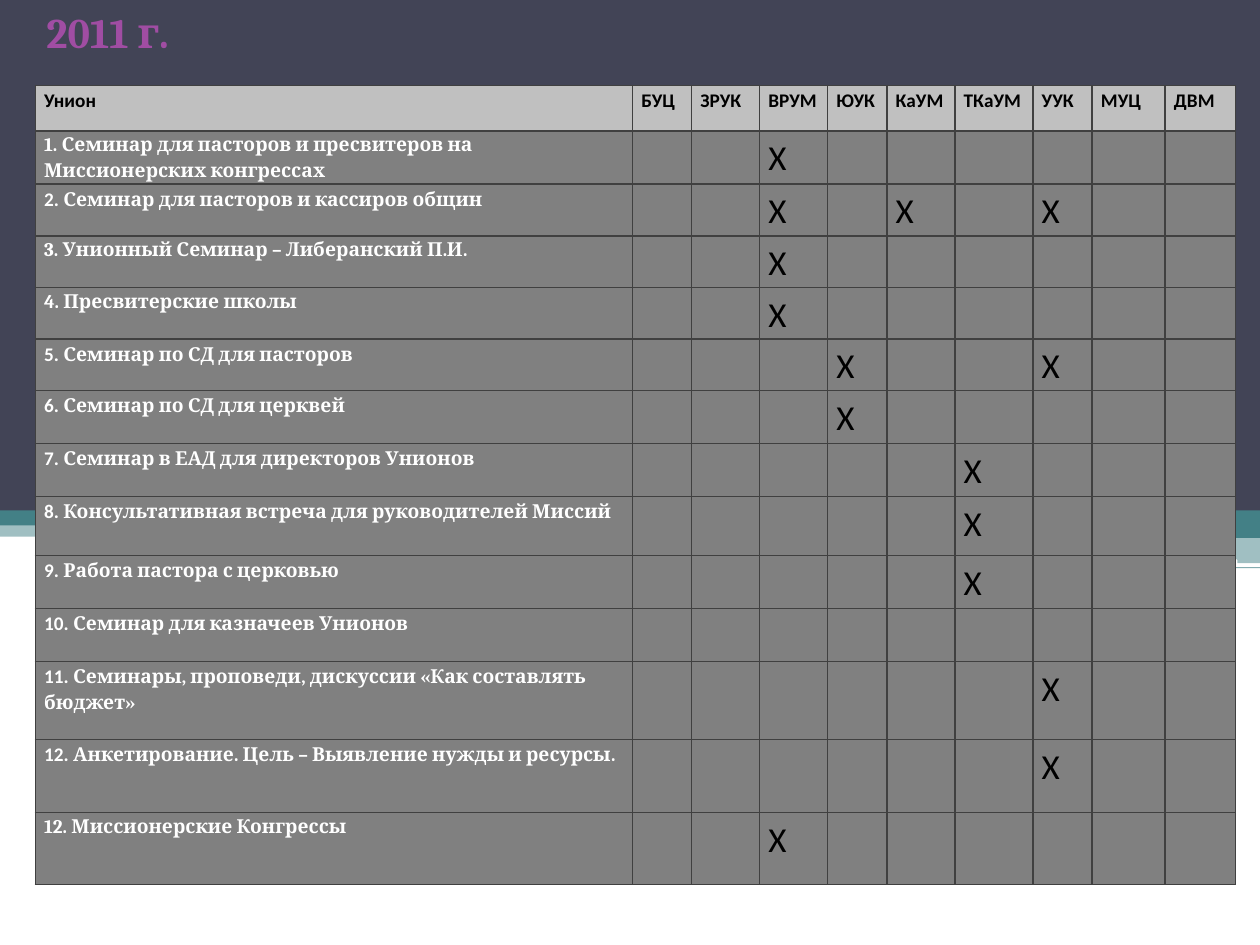
from dataclasses import dataclass

from lxml import etree
from pptx import Presentation
from pptx.dml.color import RGBColor
from pptx.enum import shapes, text
from pptx.oxml.ns import qn
from pptx.util import Inches, Pt

TEAL, WHITE, NAVY = "438086", "FFFFFF", "424456"
HEADER, BODY, BORDER = "C0C0C0", "808080", "404040"


@dataclass
class Band:
    left: float
    top: float
    width: float
    height: float
    color: str = TEAL
    opacity: int = 100
    rounded: bool = False


@dataclass
class Event:
    number: str
    title: str
    unions: tuple
    height: float
    number_font: str = "Calibri"


BANDS = [
    Band(5.92, 4.17, 4.08, 0.1),
    Band(5.92, 4.26, 4.08, 0.21, opacity=50),
    Band(5.92, 4.5, 4.08, 0.01, opacity=65),
    Band(5.92, 4.55, 2.15, 0.02, opacity=60),
    Band(5.92, 4.59, 2.15, 0.01, opacity=65),
    Band(5.92, 4.33, 3.35, 0.03, WHITE, rounded=True),
    Band(8.07, 4.44, 1.75, 0.04, WHITE, rounded=True),
    Band(0, 3.99, 10, 0.27, opacity=50),
    Band(0, 4.02, 10, 0.15),
    Band(7.01, 3.98, 2.99, 0.27),
    Band(0, 0, 10, 4.05, NAVY),
]
COLUMNS = {
    "Унион": 4.74, "БУЦ": 0.47, "ЗРУК": 0.54, "ВРУМ": 0.54, "ЮУК": 0.47,
    "КаУМ": 0.54, "ТКаУМ": 0.62, "УУК": 0.47, "МУЦ": 0.58, "ДВМ": 0.56,
}
HEADER_HEIGHT = 0.36
EVENTS = [
    Event("1.", "Семинар для пасторов и пресвитеров на Миссионерских конгрессах",
          ("ВРУМ",), 0.41, "Cambria"),
    Event("2.", "Семинар для пасторов и кассиров общин", ("ВРУМ", "КаУМ", "УУК"), 0.41),
    Event("3.", "Унионный Семинар – Либеранский П.И.", ("ВРУМ",), 0.41, "Cambria"),
    Event("4.", "Пресвитерские школы", ("ВРУМ",), 0.41, "Cambria"),
    Event("5.", "Семинар по СД для пасторов", ("ЮУК", "УУК"), 0.41),
    Event("6.", "Семинар по СД для церквей", ("ЮУК",), 0.42),
    Event("7.", "Семинар в ЕАД для директоров Унионов", ("ТКаУМ",), 0.42),
    Event("8.", "Консультативная встреча для руководителей Миссий", ("ТКаУМ",), 0.47),
    Event("9.", "Работа пастора с церковью", ("ТКаУМ",), 0.42),
    Event("10.", "Семинар для казначеев Унионов", (), 0.42),
    Event("11.", "Семинары, проповеди, дискуссии «Как составлять бюджет»", ("УУК",), 0.62),
    Event("12.", "Анкетирование. Цель – Выявление нужды и ресурсы.", ("УУК",), 0.58),
    Event("12.", "Миссионерские Конгрессы", ("ВРУМ",), 0.57, "Cambria"),
]


def rgb(value: str) -> RGBColor:
    return RGBColor.from_string(value)


def style(font, size: float, name: str, color: str, bold: bool) -> None:
    font.size, font.name, font.bold = Pt(size), name, bold
    font.color.rgb = rgb(color)


def draw_band(s, band: Band) -> None:
    kind = shapes.MSO_SHAPE.ROUNDED_RECTANGLE if band.rounded else shapes.MSO_SHAPE.RECTANGLE
    sp = s.shapes.add_shape(kind, Inches(band.left), Inches(band.top),
                            Inches(band.width), Inches(band.height))
    sp.shadow.inherit = False
    sp.line.fill.background()
    sp.fill.solid()
    sp.fill.fore_color.rgb = rgb(band.color)
    if band.opacity < 100:
        clr = sp._element.spPr.find(qn("a:solidFill"))[0]
        etree.SubElement(clr, qn("a:alpha"), val=str(band.opacity * 1000))


def draw_title(s, title: str) -> None:
    sp = s.shapes.add_textbox(Inches(0.2), Inches(0), Inches(9.13), Inches(2.18))
    tf = sp.text_frame
    tf.word_wrap = True
    tf.vertical_anchor = text.MSO_ANCHOR.TOP
    p = tf.paragraphs[0]
    p.text = title
    p.space_before = Pt(3)
    pPr = p._p.get_or_add_pPr()
    pPr.set("marL", str(Inches(0.57)))
    pPr.set("indent", str(Inches(-0.5)))
    style(p.font, 24, "Cambria", "A04DA3", True)


def format_cell(cell, fill: str) -> None:
    cell.margin_left = cell.margin_right = Inches(0.07)
    cell.margin_top = cell.margin_bottom = 0
    tcPr = cell._tc.get_or_add_tcPr()
    for side in ("a:lnL", "a:lnR", "a:lnT", "a:lnB"):
        ln = etree.SubElement(tcPr, qn(side), w=str(Pt(1)))
        solid = etree.SubElement(ln, qn("a:solidFill"))
        etree.SubElement(solid, qn("a:srgbClr"), val=BORDER)
    cell.fill.solid()
    cell.fill.fore_color.rgb = rgb(fill)
    cell.text_frame.paragraphs[0].line_spacing = 1.15


def write_cell(cell, value: str, size: float, bold: bool) -> None:
    p = cell.text_frame.paragraphs[0]
    p.text = value
    style(p.font, size, "Calibri", "000000", bold)


def write_event(cell, event: Event) -> None:
    p = cell.text_frame.paragraphs[0]
    for value, name in ((event.number + " ", event.number_font), (event.title, "Cambria")):
        r = p.add_run()
        r.text = value
        style(r.font, 11, name, WHITE, True)


def draw_table(s) -> None:
    heights = [HEADER_HEIGHT] + [event.height for event in EVENTS]
    table = s.shapes.add_table(len(heights), len(COLUMNS), Inches(0.28), Inches(0.68),
                               Inches(sum(COLUMNS.values())), Inches(sum(heights))).table
    for row, height in zip(table.rows, heights):
        row.height = Inches(height)
    for i, (union, width) in enumerate(COLUMNS.items()):
        table.columns[i].width = Inches(width)
        format_cell(table.cell(0, i), HEADER)
        write_cell(table.cell(0, i), union, 11, True)
        for j, event in enumerate(EVENTS, 1):
            cell = table.cell(j, i)
            format_cell(cell, BODY)
            if i == 0:
                write_event(cell, event)
            elif union in event.unions:
                write_cell(cell, "Х", 20, False)


def main() -> None:
    prs = Presentation()
    prs.slide_width, prs.slide_height = Inches(10), Inches(7.5)
    s = prs.slides.add_slide(prs.slide_layouts[6])
    for band in BANDS:
        draw_band(s, band)
    draw_title(s, "2011 г.")
    draw_table(s)
    prs.save("out.pptx")


if __name__ == "__main__":
    main()
